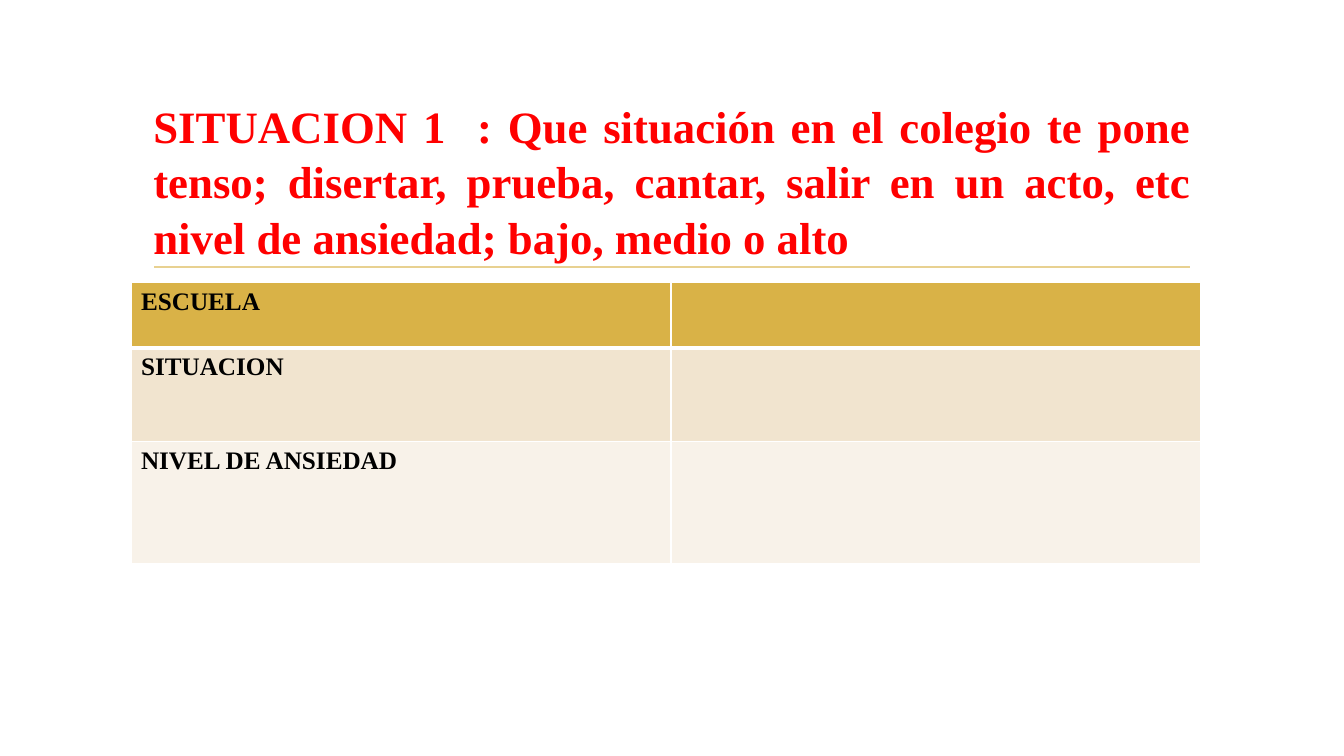
from dataclasses import dataclass

from lxml import etree
from pptx import Presentation
from pptx import util as u
from pptx.dml.color import RGBColor
from pptx.enum import shapes, text
from pptx.oxml.ns import qn

RED = RGBColor(0xFF, 0x00, 0x00)
BLACK = RGBColor(0x00, 0x00, 0x00)
WHITE = RGBColor(0xFF, 0xFF, 0xFF)
GOLD = RGBColor(0xD9, 0xB2, 0x47)
PALE_GOLD = RGBColor(0xE8, 0xD1, 0x91)
SAND = RGBColor(0xF1, 0xE4, 0xCF)
CREAM = RGBColor(0xF8, 0xF2, 0xE9)

TITLE_LINES = (
    "SITUACION 1  : Que situación en el colegio te pone tenso; "
    "disertar, prueba, cantar, salir en un acto, etc",
    "nivel de ansiedad; bajo, medio o alto",
)
TITLE_FONT = {"name": "Times New Roman", "size": u.Pt(32), "bold": True}
CELL_FONT = {"name": "Times New Roman", "size": u.Pt(18), "bold": True}
COLUMN_WIDTHS = (u.Cm(13.61), u.Cm(13.34))


@dataclass(frozen=True)
class AnswerRow:
    label: str
    height: u.Length
    fill: RGBColor
    top_border: float
    bottom_border: float


ANSWER_ROWS = (
    AnswerRow("ESCUELA", u.Cm(1.65), GOLD, 1, 3),
    AnswerRow("SITUACION", u.Cm(2.36), SAND, 3, 1),
    AnswerRow("NIVEL DE ANSIEDAD", u.Cm(3.06), CREAM, 1, 1),
)


def format_font(font, values: dict, color: RGBColor) -> None:
    for name, value in values.items():
        setattr(font, name, value)
    font.color.rgb = color


def set_borders(cell, row: AnswerRow) -> None:
    properties = cell._tc.get_or_add_tcPr()
    widths = {"lnL": 1, "lnR": 1, "lnT": row.top_border, "lnB": row.bottom_border}
    for position, (side, width) in enumerate(widths.items()):
        border = etree.Element(qn(f"a:{side}"), w=str(u.Pt(width)))
        fill = etree.SubElement(border, qn("a:solidFill"))
        etree.SubElement(fill, qn("a:srgbClr"), val=str(WHITE))
        properties.insert(position, border)


def add_title(slide) -> None:
    title = slide.shapes.title
    title.left, title.top = u.Cm(3.61), u.Cm(2.72)
    title.width, title.height = u.Cm(26.67), u.Cm(3.63)
    frame = title.text_frame
    frame.word_wrap = True
    frame.auto_size = text.MSO_AUTO_SIZE.NONE
    frame.vertical_anchor = text.MSO_ANCHOR.MIDDLE
    frame.text = "\v".join(TITLE_LINES)
    paragraph = frame.paragraphs[0]
    paragraph.alignment = text.PP_ALIGN.JUSTIFY
    paragraph.line_spacing = 1.04
    for run in paragraph.runs:
        format_font(run.font, TITLE_FONT, RED)


def add_rule(slide) -> None:
    rule = slide.shapes.add_connector(
        shapes.MSO_CONNECTOR.STRAIGHT, u.Cm(3.89), u.Cm(6.73), u.Cm(30), u.Cm(6.73)
    )
    rule.line.color.rgb = PALE_GOLD
    rule.line.width = u.Pt(1.25)
    etree.SubElement(rule._element.spPr, qn("a:effectLst"))


def add_answer_table(slide) -> None:
    table = slide.shapes.add_table(
        len(ANSWER_ROWS), len(COLUMN_WIDTHS), u.Cm(3.3), u.Cm(7.12),
        sum(COLUMN_WIDTHS), sum(row.height for row in ANSWER_ROWS),
    ).table
    for column, width in zip(table.columns, COLUMN_WIDTHS):
        column.width = width
    for table_row, row in zip(table.rows, ANSWER_ROWS):
        table_row.height = row.height
        for cell in table_row.cells:
            cell.fill.solid()
            cell.fill.fore_color.rgb = row.fill
            set_borders(cell, row)
        label = table_row.cells[0]
        label.text = row.label
        format_font(label.text_frame.paragraphs[0].runs[0].font, CELL_FONT, BLACK)


def main() -> None:
    presentation = Presentation()
    presentation.slide_width, presentation.slide_height = u.Cm(33.87), u.Cm(19.05)
    slide = presentation.slides.add_slide(presentation.slide_layouts[5])
    add_rule(slide)
    add_title(slide)
    add_answer_table(slide)
    presentation.save("out.pptx")


if __name__ == "__main__":
    main()
